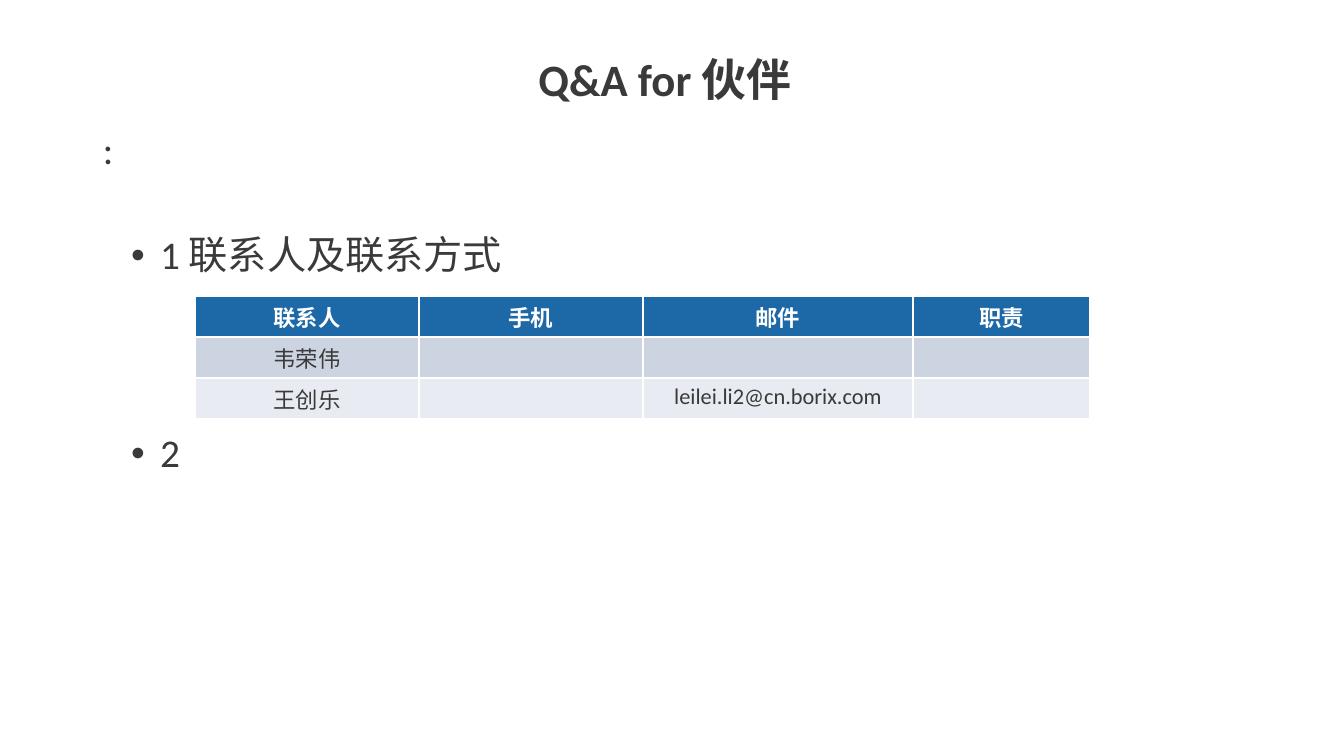
from pptx import Presentation
from pptx import util as u
from pptx.dml.color import RGBColor
from pptx.enum import text

PX = 914400 / 100.8
INK = RGBColor(0x39, 0x3A, 0x39)
WHITE = RGBColor(0xFF, 0xFF, 0xFF)
HEADER = RGBColor(0x1D, 0x68, 0xA6)
BANDS = [RGBColor(0xCD, 0xD4, 0xE1), RGBColor(0xE8, 0xEB, 0xF1)]


def px(*lengths):
    return [u.Emu(round(length * PX)) for length in lengths]


def style(para, size, color=INK, bold=False):
    para.font.name = "Calibri"
    para.font.size = u.Pt(size)
    para.font.bold = bold
    para.font.color.rgb = color


deck = Presentation()
deck.slide_width, deck.slide_height = px(1344, 756)
page = deck.slides.add_slide(deck.slide_layouts[1])

title = page.shapes.title
title.left, title.top, title.width, title.height = px(195, 46, 940, 72)
title.text_frame.text = "Q&A for 伙伴"
title.text_frame.auto_size = text.MSO_AUTO_SIZE.NONE
title.text_frame.vertical_anchor = text.MSO_ANCHOR.MIDDLE
heading = title.text_frame.paragraphs[0]
heading.alignment = text.PP_ALIGN.CENTER
heading.line_spacing = 0.9
style(heading, 32, bold=True)

body = page.placeholders[1]
body.left, body.top, body.width, body.height = px(121, 231, 1159, 479)
body.text_frame.text = "1 联系人及联系方式\n2"
body.text_frame.auto_size = text.MSO_AUTO_SIZE.NONE
indent = px(29)[0]
for para, gap in zip(body.text_frame.paragraphs, [0, 111]):
    properties = para._p.get_or_add_pPr()
    properties.set("marL", str(indent))
    properties.set("indent", str(-indent))
    para.line_spacing = 0.9
    para.space_before = u.Pt(gap)
    style(para, 28)

colon_box = page.shapes.add_textbox(*px(93, 120, 672, 57))
colon_box.text_frame.word_wrap = True
colon_box.text_frame.text = ":"
style(colon_box.text_frame.paragraphs[0], 28)

contacts = [
    ["联系人", "手机", "邮件", "职责"],
    ["韦荣伟", "", "", ""],
    ["王创乐", "", "leilei.li2@cn.borix.com", ""],
]
table = page.shapes.add_table(3, 4, *px(195, 296, 895, 123)).table
for column, width in zip(table.columns, px(224, 224, 270, 177)):
    column.width = width
for r, row in enumerate(contacts):
    table.rows[r].height = px(41)[0]
    for c, value in enumerate(row):
        cell = table.cell(r, c)
        cell.text = value
        cell.fill.solid()
        cell.fill.fore_color.rgb = BANDS[r - 1] if r else HEADER
        para = cell.text_frame.paragraphs[0]
        para.alignment = text.PP_ALIGN.CENTER
        style(para, 16, INK if r else WHITE, bold=r == 0)

deck.save("out.pptx")
